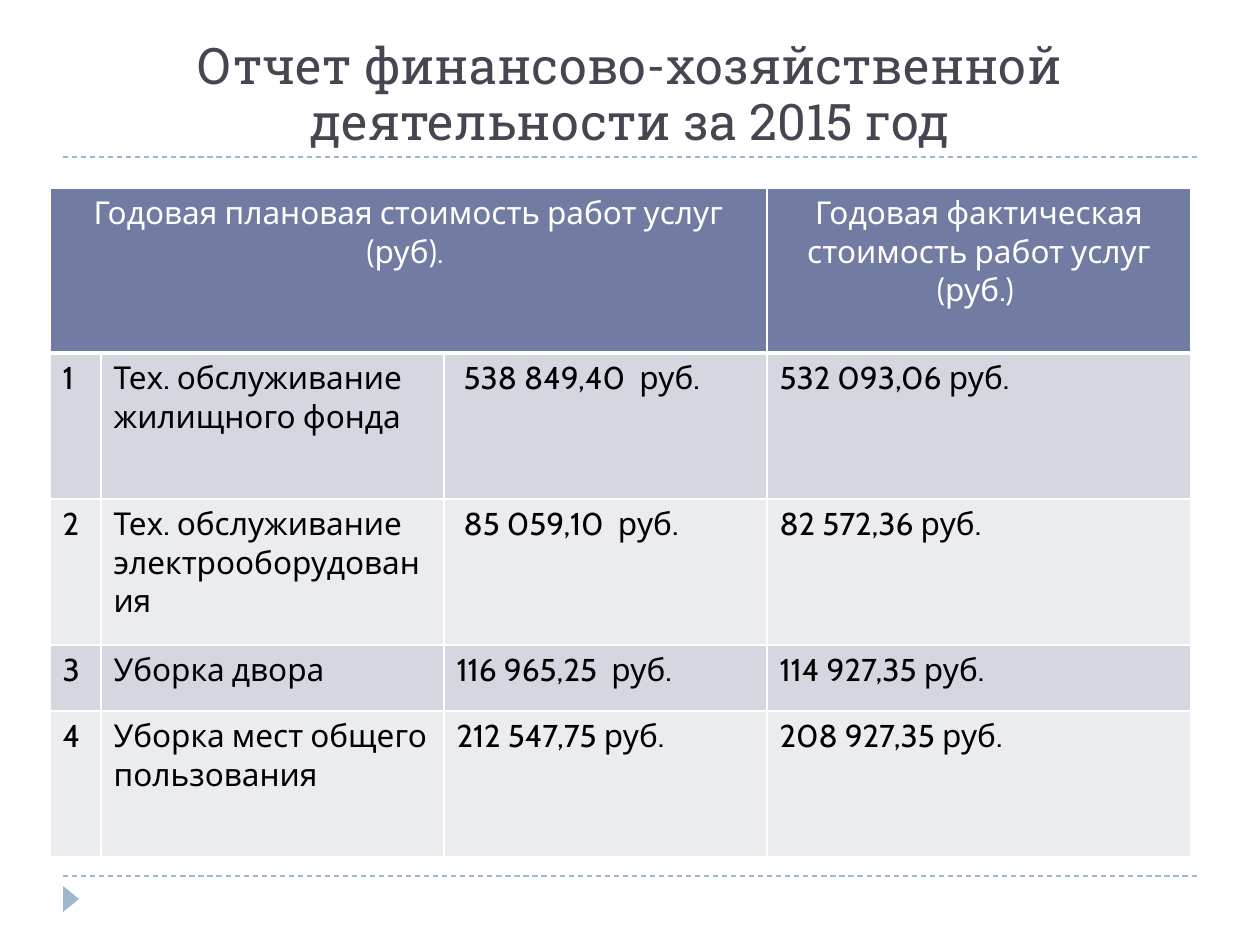
from dataclasses import dataclass

from lxml import etree
from pptx import Presentation
from pptx import util as u
from pptx.dml.color import RGBColor
from pptx.enum import dml, shapes, text
from pptx.oxml import ns

EMU_PER_PX = 914400 / 126


@dataclass(frozen=True)
class Theme:
    title: str = "464653"
    accent: str = "9FB8CD"
    header: str = "727CA3"
    bands: tuple[str, str] = ("D5D7E0", "EBECF0")
    white: str = "FFFFFF"
    black: str = "000000"
    title_font: str = "Roboto Slab"
    body_font: str = "Cabin"
    title_size: float = 28.8
    body_size: float = 18
    rule_width: float = 0.75


@dataclass(frozen=True)
class Box:
    left: int
    top: int
    width: int
    height: int

    def emu(self) -> list[int]:
        return [px(n) for n in (self.left, self.top, self.width, self.height)]


@dataclass(frozen=True)
class Work:
    name: str
    planned: str
    actual: str
    height: int


THEME = Theme()
TITLE = "Отчет финансово-хозяйственной деятельности за 2015 год"
PLANNED_HEADER = "Годовая плановая стоимость работ услуг (руб). "
ACTUAL_HEADER = "Годовая фактическая стоимость работ услуг (руб.) "
WORKS = [
    Work("Тех. обслуживание жилищного фонда", " 538 849,40  руб.", "532 093,06 руб.", 146),
    Work("Тех. обслуживание электрооборудования", " 85 059,10  руб.", "82 572,36 руб.", 146),
    Work("Уборка двора", "116 965,25  руб.", "114 927,35 руб.", 66),
    Work("Уборка мест общего пользования", "212 547,75 руб.", "208 927,35 руб.", 146),
]
COLUMN_WIDTHS = (51, 343, 323, 424)
HEADER_HEIGHT = 165
RULE_TOPS = (157, 876)
TITLE_BOX = Box(63, 32, 1134, 126)
MARKER_BOX = Box(58, 891, 26, 16)


def px(length: int) -> u.Emu:
    return u.Emu(round(length * EMU_PER_PX))


def format_text(frame, content: str, font: str, size: float, color: str, align) -> None:
    frame.text = content
    paragraph = frame.paragraphs[0]
    paragraph.alignment = align
    run_font = paragraph.runs[0].font
    for name, value in {"name": font, "size": u.Pt(size), "bold": False}.items():
        setattr(run_font, name, value)
    run_font.color.rgb = RGBColor.from_string(color)


def add_title(slide) -> None:
    title = slide.shapes.title
    for name, value in zip(("left", "top", "width", "height"), TITLE_BOX.emu()):
        setattr(title, name, value)
    frame = title.text_frame
    format_text(frame, TITLE, THEME.title_font, THEME.title_size, THEME.title,
                text.PP_ALIGN.CENTER)
    settings = {"word_wrap": True, "auto_size": text.MSO_AUTO_SIZE.NONE,
                "vertical_anchor": text.MSO_ANCHOR.BOTTOM}
    for name, value in settings.items():
        setattr(frame, name, value)
    frame.paragraphs[0].line_spacing = 0.93


def add_rule(slide, top: int) -> None:
    left, right = TITLE_BOX.left, TITLE_BOX.left + TITLE_BOX.width
    rule = slide.shapes.add_connector(shapes.MSO_CONNECTOR.STRAIGHT,
                                      px(left), px(top), px(right), px(top))
    rule.line.color.rgb = RGBColor.from_string(THEME.accent)
    rule.line.width = u.Pt(THEME.rule_width)
    rule.line.dash_style = dml.MSO_LINE.DASH
    etree.SubElement(rule._element.spPr, ns.qn("a:effectLst"))


def add_marker(slide) -> None:
    marker = slide.shapes.add_shape(shapes.MSO_SHAPE.ISOSCELES_TRIANGLE, *MARKER_BOX.emu())
    marker.rotation = 90
    marker.shadow.inherit = False
    marker.fill.solid()
    marker.fill.fore_color.rgb = RGBColor.from_string(THEME.accent)
    marker.line.fill.background()


def style_cell(cell, fill: str, bottom_width: int = 1) -> None:
    properties = cell._tc.get_or_add_tcPr()
    for side, width in {"L": 1, "R": 1, "T": 1, "B": bottom_width}.items():
        border = etree.SubElement(properties, ns.qn(f"a:ln{side}"), w=str(u.Pt(width)))
        paint = etree.SubElement(border, ns.qn("a:solidFill"))
        etree.SubElement(paint, ns.qn("a:srgbClr"), val=THEME.white)
    cell.fill.solid()
    cell.fill.fore_color.rgb = RGBColor.from_string(fill)


def add_cost_table(slide) -> None:
    row_heights = [HEADER_HEIGHT] + [work.height for work in WORKS]
    box = Box(50, 188, sum(COLUMN_WIDTHS), sum(row_heights))
    table = slide.shapes.add_table(len(row_heights), len(COLUMN_WIDTHS), *box.emu()).table
    for column, width in zip(table.columns, COLUMN_WIDTHS):
        column.width = px(width)
    for row, height in zip(table.rows, row_heights):
        row.height = px(height)

    for cell in table.rows[0].cells:
        style_cell(cell, THEME.header, bottom_width=3)
    table.cell(0, 0).merge(table.cell(0, 2))
    for column, content in {0: PLANNED_HEADER, 3: ACTUAL_HEADER}.items():
        format_text(table.cell(0, column).text_frame, content, THEME.body_font,
                    THEME.body_size, THEME.white, text.PP_ALIGN.CENTER)

    for number, work in enumerate(WORKS, start=1):
        contents = (str(number), work.name, work.planned, work.actual)
        for cell, content in zip(table.rows[number].cells, contents):
            style_cell(cell, THEME.bands[(number - 1) % 2])
            format_text(cell.text_frame, content, THEME.body_font, THEME.body_size,
                        THEME.black, text.PP_ALIGN.LEFT)


def main() -> None:
    presentation = Presentation()
    presentation.slide_width, presentation.slide_height = px(1260), px(945)
    slide = presentation.slides.add_slide(presentation.slide_layouts[5])
    for top in RULE_TOPS:
        add_rule(slide, top)
    add_marker(slide)
    add_title(slide)
    add_cost_table(slide)
    presentation.save("out.pptx")


if __name__ == "__main__":
    main()
